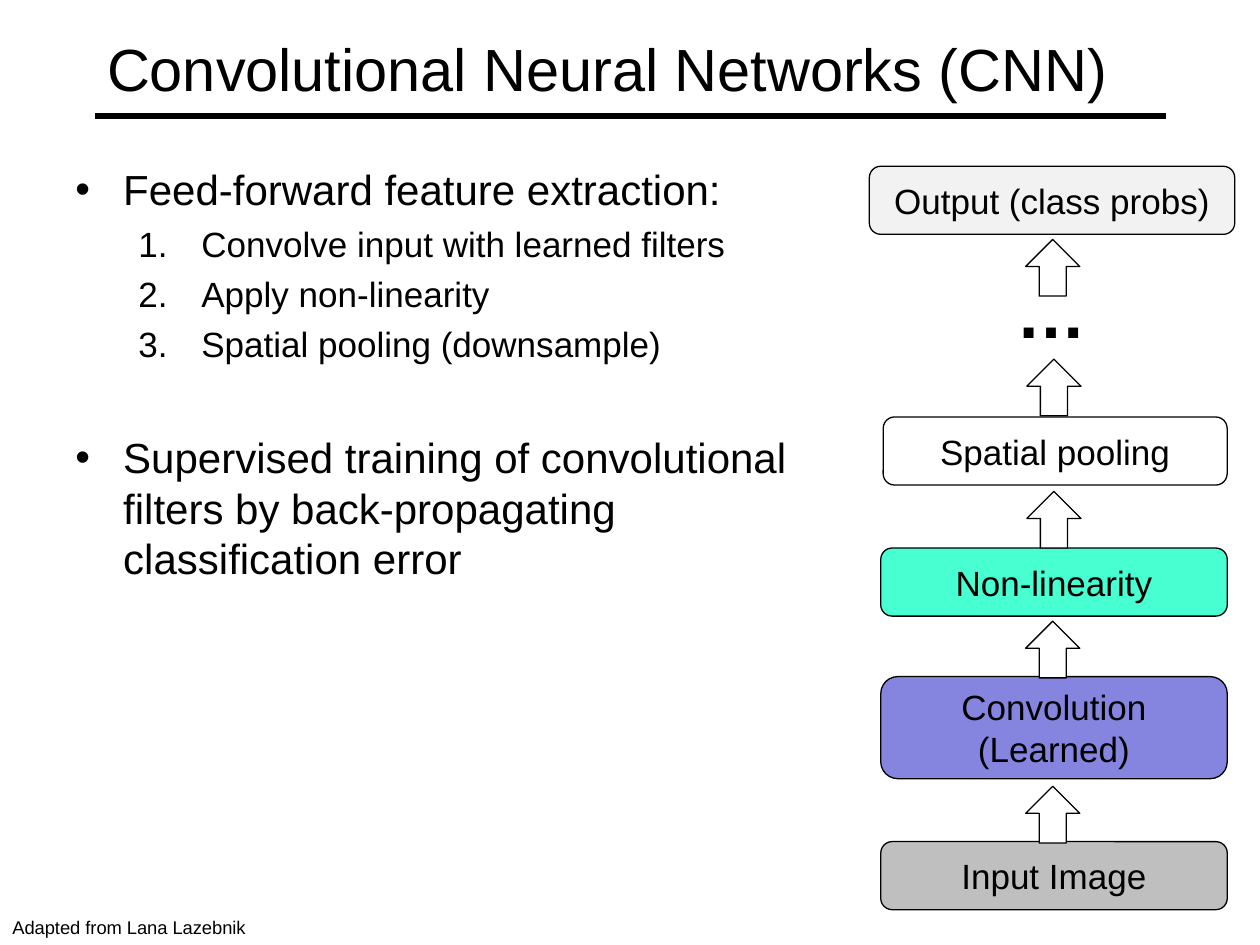
from typing import NamedTuple

from lxml.etree import SubElement
from pptx import Presentation
from pptx.dml.color import RGBColor as Rgb
from pptx.enum.shapes import MSO_CONNECTOR as Conn, MSO_SHAPE as Kind
from pptx.enum.text import MSO_ANCHOR as Anchor, MSO_AUTO_SIZE as Auto, PP_ALIGN as Align
from pptx.oxml.ns import qn
from pptx.util import Inches, Pt

FONT = "Arial"
COLORS = {
    "ink": "000000",
    "white": "FFFFFF",
    "input": "BFBFBF",
    "conv": "8585E0",
    "relu": "47FFD1",
    "output": "F2F2F2",
}


class Stage(NamedTuple):
    text: str
    color: str
    left: float
    top: float
    width: float = 2.75
    height: float = 0.54


class Arrow(NamedTuple):
    left: float
    top: float


class Point(NamedTuple):
    lines: tuple[str, ...]
    gap: float  # points above
    step: bool = False  # numbered second-level item


STAGES = [
    Stage("Input Image", "input", 6.99, 6.68),
    Stage("Convolution (Learned)", "conv", 6.99, 5.37, height=0.81),
    Stage("Non-linearity", "relu", 6.99, 4.35),
    Stage("Spatial pooling", "white", 7.01, 3.31, 2.73),
    Stage("Output (class probs)", "output", 6.9, 1.32, 2.9),
]
ARROWS = [
    Arrow(8.14, 6.24),
    Arrow(8.14, 4.93),
    Arrow(8.15, 3.9),
    Arrow(8.15, 2.85),
    Arrow(8.14, 1.9),
]
POINTS = [
    Point(("Feed-forward feature extraction:",), 5.5),
    Point(("Convolve input with learned filters",), 4.6, True),
    Point(("Apply non-linearity",), 4.6, True),
    Point(("Spatial pooling (downsample)",), 4.6, True),
    Point(("Supervised training of convolutional", "filters by back-propagating",
           "classification error"), 38.6),
]


def color(name: str) -> Rgb:
    return Rgb.from_string(COLORS[name])


def add_run(para, text: str, size: float, bold: bool = False) -> None:
    run = para.add_run()
    run.text = text
    font = run.font
    font.name, font.size, font.bold = FONT, Pt(size), bold
    font.color.rgb = color("ink")


def add_shape(slide, kind, box: tuple[float, ...], fill: str):
    shape = slide.shapes.add_shape(kind, *map(Inches, box))
    shape.shadow.inherit = False
    shape.fill.solid()
    shape.fill.fore_color.rgb = color(fill)
    shape.line.color.rgb = color("ink")
    shape.line.width = Pt(0.75)
    return shape


def add_stage(slide, stage: Stage) -> None:
    box = (stage.left, stage.top, stage.width, stage.height)
    frame = add_shape(slide, Kind.ROUNDED_RECTANGLE, box, stage.color).text_frame
    frame.word_wrap = True
    frame.vertical_anchor = Anchor.MIDDLE
    para = frame.paragraphs[0]
    para.alignment = Align.CENTER
    add_run(para, stage.text, 20)


def add_label(slide, text: str, box: tuple[float, ...], size: float,
              bold: bool = False) -> None:
    frame = slide.shapes.add_textbox(*map(Inches, box)).text_frame
    frame.word_wrap = False
    frame.auto_size = Auto.SHAPE_TO_FIT_TEXT
    add_run(frame.paragraphs[0], text, size, bold)


def add_point(para, point: Point) -> None:
    left, hang = (1, 0.5) if point.step else (0.38, 0.38)
    para.level = int(point.step)
    para.space_before = Pt(point.gap)
    props = para._p.get_or_add_pPr()
    props.set("marL", str(Inches(left)))
    props.set("indent", str(-Inches(hang)))
    SubElement(props, qn("a:buFont"), typeface=FONT)
    if point.step:
        SubElement(props, qn("a:buAutoNum"), type="arabicPeriod")
    else:
        SubElement(props, qn("a:buChar"), char="•")
    for i, line in enumerate(point.lines):
        if i:
            para.add_line_break()
        add_run(para, line, 20 if point.step else 24)


def add_rule(slide) -> None:
    rule = slide.shapes.add_connector(
        Conn.STRAIGHT, Inches(0.75), Inches(0.92), Inches(9.25), Inches(0.92))
    rule.line.color.rgb = color("ink")
    rule.line.width = Pt(3)
    SubElement(rule._element.spPr, qn("a:effectLst"))


def main() -> None:
    deck = Presentation()
    deck.slide_width, deck.slide_height = Inches(10), Inches(7.5)
    slide = deck.slides.add_slide(deck.slide_layouts[5])

    # Title and the rule below it
    add_rule(slide)
    title = slide.shapes.title
    title.left, title.top = Inches(0.75), Inches(0.08)
    title.width, title.height = Inches(8.5), Inches(0.92)
    frame = title.text_frame
    frame.auto_size = Auto.NONE
    frame.vertical_anchor = Anchor.MIDDLE
    frame.paragraphs[0].alignment = Align.LEFT
    add_run(frame.paragraphs[0], "Convolutional Neural Networks (CNN)", 34)

    # Bulleted text
    box = map(Inches, (0.5, 1.25, 9, 4.95))
    frame = slide.shapes.add_textbox(*box).text_frame
    frame.word_wrap = True
    for i, point in enumerate(POINTS):
        add_point(frame.add_paragraph() if i else frame.paragraphs[0], point)

    # Credit
    add_label(slide, "Adapted from Lana Lazebnik", (0, 7.22, 2.09, 0.28), 10.5)

    # Network, from input up to output
    for stage in STAGES:
        add_stage(slide, stage)
    for arrow in ARROWS:
        add_shape(slide, Kind.UP_ARROW, (*arrow, 0.43, 0.45), "white")
    add_label(slide, "…", (7.97, 2.08, 0.76, 0.77), 40, True)

    deck.save("out.pptx")


if __name__ == "__main__":
    main()
